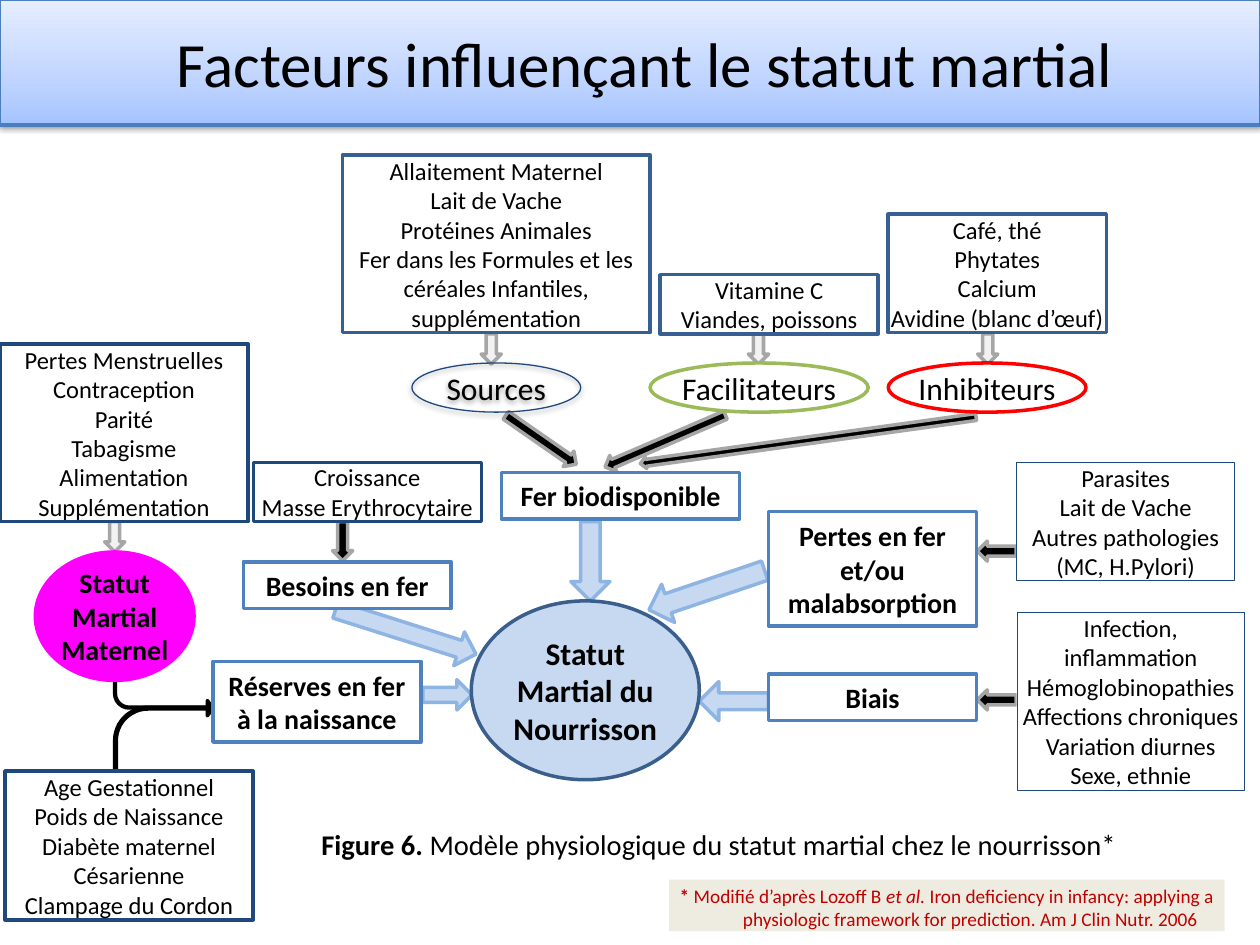
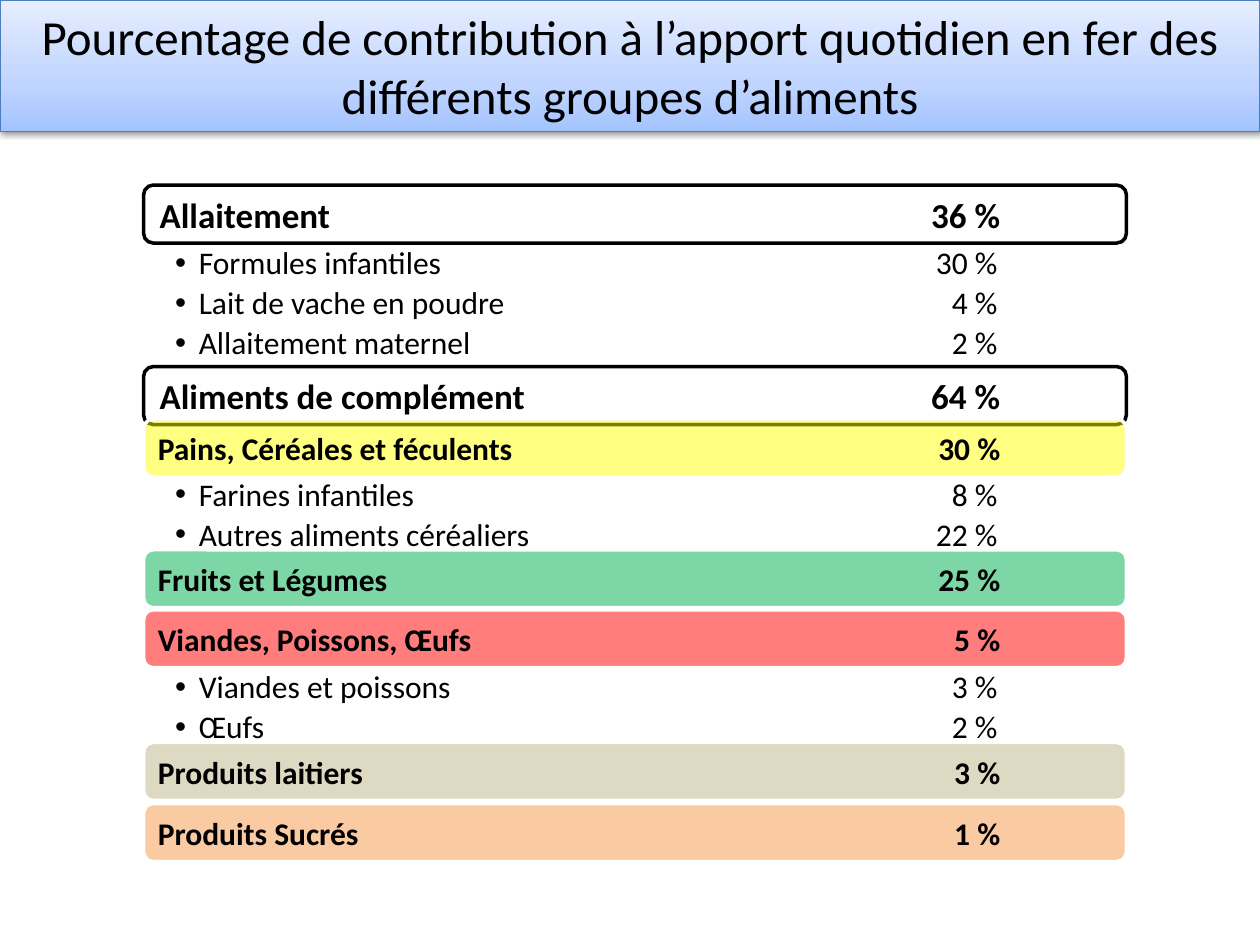
from dataclasses import dataclass

from lxml.etree import SubElement
from pptx import Presentation
from pptx.dml.color import RGBColor
from pptx.enum.shapes import MSO_CONNECTOR, MSO_SHAPE
from pptx.enum.text import MSO_ANCHOR, MSO_AUTO_SIZE, PP_ALIGN
from pptx.oxml import parse_xml
from pptx.oxml.ns import nsdecls, qn
from pptx.util import Pt


@dataclass(frozen=True)
class Theme:
    font: str = "Calibri"
    black: str = "000000"
    white: str = "FFFFFF"
    band_line: str = "4B7EBC"
    band_stops: tuple = ((0, "A4C4FF"), (35, "BFD4FF"), (100, "E6EEFF"))
    step_line: str = "4F81BD"
    navy: str = "1F497D"
    steel: str = "376092"
    infant_line: str = "3A5F8C"
    pale_blue: str = "C6D9F1"
    sky: str = "8EB4E3"
    light_grey: str = "F2F2F2"
    grey: str = "A6A6A6"
    magenta: str = "FF00FF"
    green: str = "9BBB59"
    red: str = "FF0000"
    cream: str = "EEECE1"
    dark_red: str = "C00000"
    factor_size: float = 14
    step_size: float = 16
    caption_size: float = 16.3
    large_size: float = 18
    group_size: float = 20
    note_size: float = 11


theme = Theme()
SHADOW = (
    f'<a:effectLst {nsdecls("a")}><a:outerShdw blurRad="{Pt(3.1)}" dist="{Pt(1.6)}" dir="5400000" '
    'rotWithShape="0"><a:srgbClr val="000000"><a:alpha val="38000"/></a:srgbClr></a:outerShdw></a:effectLst>'
)


def set_text(shape, lines, size, bold=False, color=theme.black, align=PP_ALIGN.CENTER,
             insets=(0, 0, 0, 0), anchor=MSO_ANCHOR.MIDDLE):
    """Each line is a string or a list of (text, bold, italic) runs."""
    frame = shape.text_frame
    frame.word_wrap = True
    frame.auto_size = MSO_AUTO_SIZE.NONE
    frame.vertical_anchor = anchor
    frame.margin_left, frame.margin_top, frame.margin_right, frame.margin_bottom = map(Pt, insets)
    for index, line in enumerate(lines):
        paragraph = frame.paragraphs[0] if index == 0 else frame.add_paragraph()
        paragraph.alignment = align
        paragraph.space_before = Pt(0)
        font = paragraph.font
        font.name, font.size = theme.font, Pt(size)
        font.color.rgb = RGBColor.from_string(color)
        if isinstance(line, str):
            font.bold = bold
            paragraph.add_run().text = line
        else:
            for text, run_bold, run_italic in line:
                run = paragraph.add_run()
                run.text, run.font.bold, run.font.italic = text, run_bold, run_italic
    return frame.paragraphs


def add_block(slide, kind, box, fill=theme.white, line=None, width=2.0, rotation=0.0):
    block = slide.shapes.add_shape(kind, *map(Pt, box))
    block.shadow.inherit = False
    block.rotation = rotation
    if fill:
        block.fill.solid()
        block.fill.fore_color.rgb = RGBColor.from_string(fill)
    else:
        block.fill.background()
    if line:
        block.line.color.rgb = RGBColor.from_string(line)
        block.line.width = Pt(width)
    else:
        block.line.fill.background()
    return block


deck = Presentation()
deck.slide_width, deck.slide_height = Pt(720), Pt(540)

# Slides with their shared title band
slides = []
for layout, heading, height, size, margin, indent in (
    (1, "Facteurs influençant le statut martial", 71.3, 36, 57, -40.5),
    (4, "Pourcentage de contribution à l’apport quotidien en fer des différents groupes d’aliments",
     75, 28, 0, 0),
):
    slide = deck.slides.add_slide(deck.slide_layouts[layout])
    slides.append(slide)
    band = slide.shapes.title
    band.left, band.top, band.width, band.height = Pt(0), Pt(0), Pt(720), Pt(height)
    band.line.color.rgb = RGBColor.from_string(theme.band_line)
    band.line.width = Pt(0.75)
    stops = "".join(f'<a:gs pos="{pos * 1000}"><a:srgbClr val="{color}"/></a:gs>'
                    for pos, color in theme.band_stops)
    properties = band.element.spPr
    properties.find(qn("a:ln")).addprevious(parse_xml(
        f'<a:gradFill {nsdecls("a")} rotWithShape="1"><a:gsLst>{stops}</a:gsLst>'
        '<a:lin ang="16200000" scaled="0"/></a:gradFill>'))
    properties.append(parse_xml(SHADOW))
    title_line = set_text(band, [heading], size, insets=(7.2, 3.6, 7.2, 3.6))[0]
    title_line._p.get_or_add_pPr().set("marL", str(Pt(margin)))
    title_line._p.get_or_add_pPr().set("indent", str(Pt(indent)))
factors, intake = slides

# Slide 1: rule under the title and figure caption
rule = factors.shapes.add_connector(MSO_CONNECTOR.STRAIGHT, Pt(0), Pt(71.3), Pt(720), Pt(71.3))
rule.line.color.rgb = RGBColor.from_string(theme.band_line)
rule.line.width = Pt(2)
SubElement(rule.element.spPr, qn("a:effectLst"))

caption = factors.placeholders[1]
caption.left, caption.top, caption.width, caption.height = Pt(161.3), Pt(468.7), Pt(499), Pt(28)
caption_line = set_text(
    caption, [[("Figure 6. ", True, False),
               ("Modèle physiologique du statut martial chez le nourrisson*", False, False)]],
    theme.caption_size, insets=(7.2, 3.6, 7.2, 3.6), anchor=MSO_ANCHOR.TOP)[0]
caption_format = caption_line._p.get_or_add_pPr()
caption_format.set("marL", "0")
caption_format.set("indent", "0")
caption_format.find(qn("a:defRPr")).addprevious(parse_xml(f'<a:buNone {nsdecls("a")}/>'))

# Block arrows: box, rotation, relative shaft width
arrow_styles = (
    (theme.black, theme.grey, (
        ((303.8, 226.8, 10.8, 49), 304.8, 0.5),
        ((375.1, 214.6, 10.1, 74.9), 66.7, 0.5),
        ((458.6, 154.8, 6.5, 193.7), 82.1, 0.61),
        ((563.8, 388.8, 11.5, 22.3), 90, 0.5),
        ((563.8, 303.8, 11.5, 22.3), 90, 0.5),
        ((190.1, 298.1, 11.5, 22.3), 0, 0.5))),
    (theme.pale_blue, theme.sky, (
        ((221.8, 319, 20.2, 84.2), 287.6, 0.5),
        ((247, 383, 17.3, 28.1), 270, 0.5),
        ((326.2, 298.1, 22.3, 45.4), 0, 0.5),
        ((408.2, 380.9, 22.3, 39.6), 90, 0.43),
        ((392.4, 302.4, 23, 69.8), 71.3, 0.5))),
    (theme.light_grey, theme.grey, tuple(
        ((left, top, 11.5, 17.3), 0, 0.5)
        for left, top in ((275, 190.8), (427.7, 190.8), (558.7, 190.8), (59.8, 298.1)))),
)
for fill, line, arrows in arrow_styles:
    for box, rotation, shaft in arrows:
        arrow = add_block(factors, MSO_SHAPE.DOWN_ARROW, box, fill, line, rotation=rotation)
        arrow.adjustments[0] = shaft

# Bent arrows joining the two maternal causes to the birth reserves
for box, adjustments, flipped in (
    ((65.5, 400.3, 56.2, 39.6), (0.024, 0.11, 0.081, 0.481), False),
    ((65.5, 388.8, 56.9, 17.3), (0.024, 0.098, 0.161, 0.481), True),
):
    bend = add_block(factors, MSO_SHAPE.BENT_ARROW, box, theme.black, theme.black)
    for index, value in enumerate(adjustments):
        bend.adjustments[index] = value
    if flipped:
        bend.element.spPr.xfrm.set("flipV", "1")

# Steps of the model
for box, lines in (
    ((121.7, 378, 118.8, 46.1), ["Réserves en fer à la naissance"]),
    ((139, 321.1, 118.8, 26.6), ["Besoins en fer"]),
    ((286.6, 270, 136.1, 26.6), ["Fer biodisponible"]),
    ((439.2, 292.3, 118.8, 65.5), ["Pertes en fer et/ou", "malabsorption"]),
    ((439.2, 385.2, 118.8, 26.6), ["Biais"]),
):
    step = add_block(factors, MSO_SHAPE.RECTANGLE, box, line=theme.step_line)
    set_text(step, lines, theme.step_size, bold=True, insets=(7.2, 3.6, 7.2, 3.6))

# Lists of factors
for box, line, width, lines in (
    ((0, 196.6, 141.8, 101.5), theme.navy, 2,
     ["Pertes Menstruelles", "Contraception", "Parité", "Tabagisme", "Alimentation", "Supplémentation"]),
    ((2.9, 440.6, 141.8, 85), theme.navy, 2,
     ["Age Gestationnel", "Poids de Naissance", "Diabète maternel", "Césarienne", "Clampage du Cordon"]),
    ((144.7, 264.2, 130.3, 33.8), theme.navy, 1.5, ["Croissance", "Masse Erythrocytaire"]),
    ((195.8, 88.6, 175.7, 101.5), theme.steel, 2,
     ["Allaitement Maternel", "Lait de Vache", "Protéines Animales",
      "Fer dans les Formules et les céréales Infantiles,", "supplémentation"]),
    ((377.3, 157, 124.6, 33.8), theme.steel, 2, ["Vitamine C", "Viandes, poissons"]),
    ((507.6, 122.4, 124.6, 67.7), theme.steel, 2,
     ["Café, thé", "Phytates", "Calcium", "Avidine (blanc d’œuf)"]),
    ((581, 264.2, 124.6, 67.7), theme.navy, 0.25,
     ["Parasites", "Lait de Vache", "Autres pathologies (MC, H.Pylori)"]),
    ((581, 349.9, 130.3, 101.5), theme.navy, 0.25,
     ["Infection, inflammation", "Hémoglobinopathies", "Affections chroniques",
      "Variation diurnes", "Sexe, ethnie"]),
):
    factor = add_block(factors, MSO_SHAPE.RECTANGLE, box, line=line, width=width)
    set_text(factor, lines, theme.factor_size)

# Ovals: iron status and dietary roles
for box, fill, line, width, label, size, bold in (
    ((269.3, 343.4, 130.3, 102.2), theme.pale_blue, theme.infant_line, 2,
     "Statut Martial du Nourrisson", theme.large_size, True),
    ((20.2, 315.4, 90.7, 73.4), theme.magenta, theme.magenta, 2,
     "Statut Martial Maternel", theme.step_size, True),
    ((235.4, 207.4, 96.5, 28.1), None, theme.navy, 0.75, "Sources", theme.large_size, False),
    ((371.5, 207.4, 124.6, 28.1), theme.white, theme.green, 2, "Facilitateurs", theme.large_size, False),
    ((507.6, 207.4, 113, 28.1), theme.white, theme.red, 2, "Inhibiteurs", theme.large_size, False),
):
    oval = add_block(factors, MSO_SHAPE.OVAL, box, fill, line, width)
    set_text(oval, [label], size, bold=bold)
    if label == "Sources":
        properties = oval.element.spPr
        properties.replace(properties.find(qn("a:effectLst")), parse_xml(SHADOW))

# Reference
reference = add_block(factors, MSO_SHAPE.RECTANGLE, (382.3, 502.6, 317.5, 29.5), theme.cream)
reference_line = set_text(
    reference, [[("* ", True, False), ("Modifié d’après Lozoff B ", False, False), ("et al.", False, True),
                 (" Iron deficiency in infancy: applying a physiologic framework for prediction. "
                  "Am J Clin Nutr. 2006", False, False)]],
    theme.note_size, color=theme.dark_red, insets=(5.8, 2.9, 5.8, 0), anchor=MSO_ANCHOR.TOP)[0]
reference_line._p.get_or_add_pPr().set("marL", str(Pt(27)))
reference_line._p.get_or_add_pPr().set("indent", str(Pt(-27)))

# Slide 2: food groups as bands, shares aligned on a right tab
LEFT, WIDTH, SHARE_EDGE = 82.1, 561.6, 570
rows = []
for top, label, share, fill, opacity, main in (
    (105.8, "Allaitement", 36, theme.white, 100, True),
    (209.5, "Aliments de complément", 64, theme.white, 100, True),
    (239.4, "Pains, Céréales et féculents", 30, "FFFF00", 49, False),
    (314.2, "Fruits et Légumes", 25, "00B050", 51, False),
    (348.5, "Viandes, Poissons, Œufs", 5, "FF0000", 51, False),
    (424.3, "Produits laitiers", 3, "DDD9C3", 100, False),
    (459.2, "Produits Sucrés", 1, "F79646", 50, False),
):
    group = add_block(intake, MSO_SHAPE.ROUNDED_RECTANGLE, (LEFT, top, WIDTH, 33.1), fill,
                      theme.black if main else theme.white)
    if opacity < 100:
        tint = group.element.spPr.find(qn("a:solidFill"))[0]
        SubElement(tint, qn("a:alpha"), val=str(opacity * 1000))
    inset = 7.5 if main else 6.5
    size = theme.group_size if main else theme.large_size
    lines = set_text(group, [f"{label}\t{share} %"], size, bold=True, align=PP_ALIGN.LEFT,
                     insets=(inset, 0, inset, 0))
    rows.append((lines[0], inset, False))

# Foods within the groups
foods = (
    (139, 64.8, (("Formules infantiles", 30), ("Lait de vache en poudre", 4), ("Allaitement maternel", 2))),
    (271.4, 42.5, (("Farines infantiles", 8), ("Autres aliments céréaliers", 22))),
    (381.6, 42.5, (("Viandes et poissons", 3), ("Œufs", 2))),
)
*food_lists, unused = list(intake.placeholders)[1:]
unused.element.getparent().remove(unused.element)
for food_list, (top, height, items) in zip(food_lists, foods):
    food_list.left, food_list.top, food_list.width, food_list.height = map(Pt, (LEFT, top, WIDTH, height))
    lines = set_text(food_list, [f"{label}\t{share} %" for label, share in items], theme.large_size,
                     align=PP_ALIGN.LEFT, insets=(18, 2.2, 10, 2.2), anchor=MSO_ANCHOR.TOP)
    for line in lines:
        line.line_spacing, line.space_after = 0.9, Pt(3.4)
        rows.append((line, 18, True))

# Bullets and tab stops
for line, inset, bulleted in rows:
    row_format = line._p.get_or_add_pPr()
    defaults = row_format.find(qn("a:defRPr"))
    if bulleted:
        row_format.set("marL", str(Pt(13.5)))
        row_format.set("indent", str(Pt(-13.5)))
        defaults.addprevious(parse_xml(f'<a:buFont {nsdecls("a")} typeface="Arial"/>'))
        defaults.addprevious(parse_xml(f'<a:buChar {nsdecls("a")} char="•"/>'))
    stop = Pt(SHARE_EDGE - LEFT - inset)
    defaults.addprevious(parse_xml(
        f'<a:tabLst {nsdecls("a")}><a:tab pos="{stop}" algn="r"/></a:tabLst>'))

deck.save("out.pptx")
